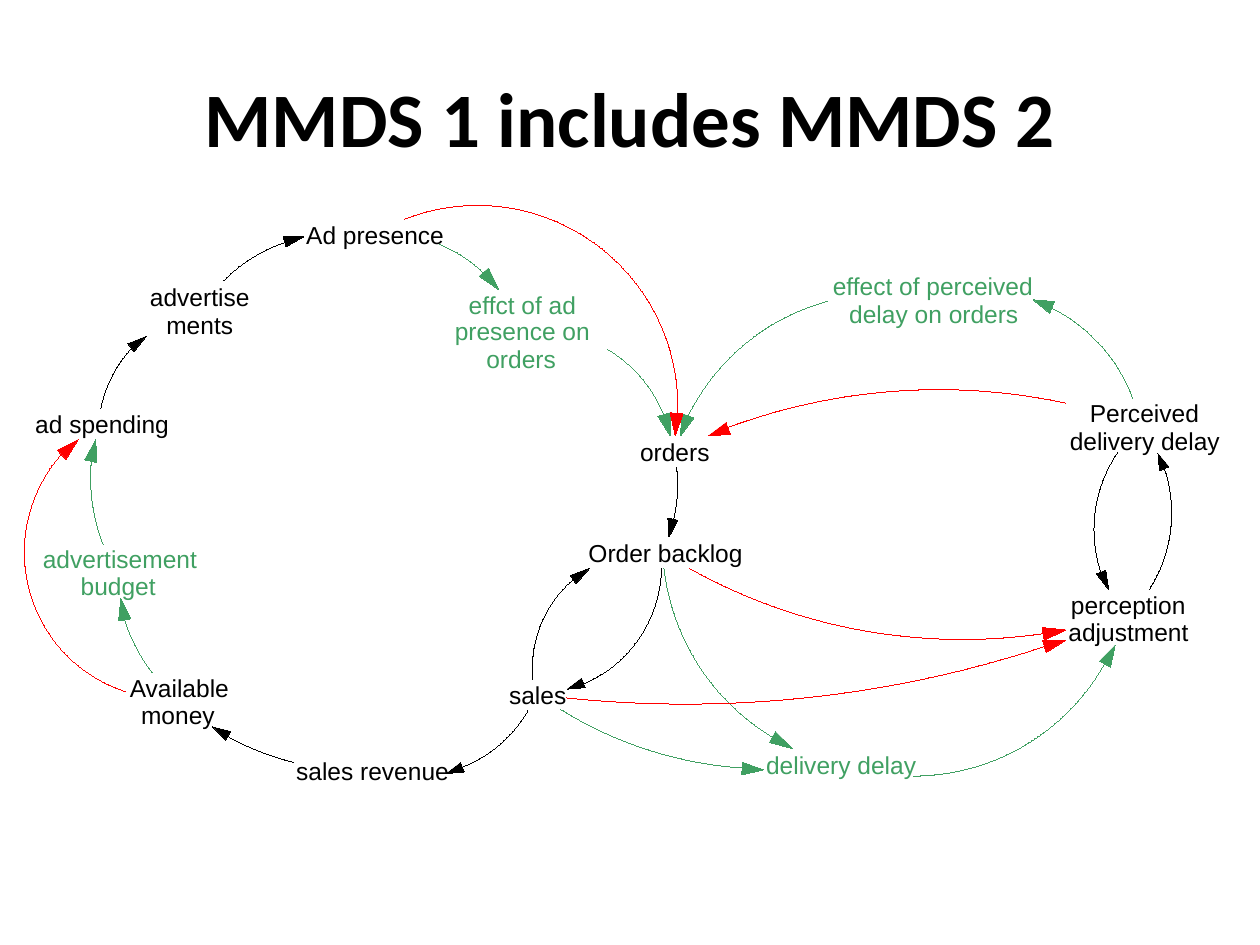
"""Build a slide with a causal loop diagram of advertising, orders and delivery delay."""
from math import atan2, cos, degrees, dist, pi, remainder, sin

from lxml import etree
from pptx import Presentation
from pptx.dml.color import RGBColor
from pptx.enum.text import MSO_ANCHOR, MSO_AUTO_SIZE, PP_ALIGN
from pptx.oxml import parse_xml
from pptx.oxml.ns import nsdecls, qn
from pptx.util import Emu, Inches, Pt

BLACK, GREEN, RED = "000000", "40A062", "FF0000"
STEPS = 16


def tint(value):
    return RGBColor.from_string(value)


def draw(shapes, points, hue):
    spots = [(Inches(x), Inches(y)) for x, y in points]
    pen = shapes.build_freeform(*spots[0])
    pen.add_line_segments(spots[1:], close=True)
    shape = pen.convert_to_shape()
    shape.shadow.inherit = False
    shape.line.color.rgb = tint(hue)
    shape.line.width = Emu(1)
    return shape


deck = Presentation()
deck.slide_width, deck.slide_height = Inches(10), Inches(7.5)
slide = deck.slides.add_slide(deck.slide_layouts[5])

title = slide.shapes.title
title.left, title.top = Inches(0.5), Inches(0.3)
title.width, title.height = Inches(9), Inches(1.25)
title.text_frame.text = "MMDS 1 includes MMDS 2"
title.text_frame.vertical_anchor = MSO_ANCHOR.MIDDLE
head = title.text_frame.paragraphs[0]
head.alignment = PP_ALIGN.CENTER
head.font.name, head.font.size, head.font.bold = "Calibri", Pt(44), True
head.font.color.rgb = tint(BLACK)

# left, top, width, words
labels = {
    BLACK: [
        (1.19, 2.24, 0.89, "advertise"),
        (1.32, 2.46, 0.62, "ments"),
        (4.04, 5.4, 0.54, "sales"),
        (2.35, 6, 1.31, "sales revenue"),
        (2.43, 1.75, 1.19, "Ad presence"),
        (5.08, 3.47, 0.65, "orders"),
        (4.67, 4.27, 1.32, "Order backlog"),
        (1.03, 5.34, 0.89, "Available"),
        (1.12, 5.56, 0.67, "money"),
        (0.28, 3.25, 1.16, "ad spending"),
        (8.65, 3.16, 0.96, "Perceived"),
        (8.49, 3.38, 1.28, "delivery delay"),
        (8.5, 4.68, 1, "perception"),
        (8.48, 4.9, 1.05, "adjustment"),
    ],
    GREEN: [
        (0.34, 4.32, 1.32, "advertisement"),
        (0.64, 4.53, 0.69, "budget"),
        (3.72, 2.3, 0.95, "effct of ad"),
        (3.61, 2.51, 1.17, "presence on"),
        (3.86, 2.73, 0.65, "orders"),
        (6.08, 5.95, 1.28, "delivery delay"),
        (6.61, 2.15, 1.7, "effect of perceived"),
        (6.74, 2.37, 1.44, "delay on orders"),
    ],
}
for hue, rows in labels.items():
    for left, top, width, words in rows:
        box = slide.shapes.add_textbox(Inches(left), Inches(top), Inches(width), Inches(0.26))
        frame = box.text_frame
        frame.margin_left = frame.margin_right = frame.margin_top = frame.margin_bottom = 0
        frame.word_wrap = False
        frame.auto_size = MSO_AUTO_SIZE.SHAPE_TO_FIT_TEXT
        frame.text = words
        font = frame.paragraphs[0].font
        font.name, font.size = "Arial", Pt(14)
        font.color.rgb = tint(hue)

# tail, base of head, tip, centre of arc
arrows = {
    BLACK: [
        ((4.19, 5.64), (3.67, 6.09), (3.54, 6.14), (3.28, 5.11)),
        ((1.77, 2.23), (2.26, 1.92), (2.41, 1.88), (2.68, 3.14)),
        ((5.37, 3.71), (5.34, 4.12), (5.31, 4.26), (4.2, 3.85)),
        ((5.25, 4.51), (4.63, 5.42), (4.5, 5.47), (4.23, 4.49)),
        ((2.33, 6.05), (1.81, 5.84), (1.69, 5.77), (2.82, 4.05)),
        ((0.8, 3.24), (1.04, 2.76), (1.16, 2.67), (1.78, 3.44)),
        ((9.12, 4.68), (9.24, 3.72), (9.19, 3.6), (8.17, 4.07)),
        ((4.23, 5.39), (4.55, 4.6), (4.68, 4.51), (5.15, 5.3)),
        ((8.87, 3.59), (8.74, 4.54), (8.8, 4.68), (9.77, 4.2)),
    ],
    GREEN: [
        ((3.49, 1.94), (3.84, 2.16), (3.96, 2.3), (3.09, 2.94)),
        ((4.82, 2.77), (5.27, 3.29), (5.32, 3.46), (4.28, 3.69)),
        ((1.21, 5.34), (0.99, 4.92), (0.96, 4.75), (2.29, 4.51)),
        ((0.82, 4.32), (0.72, 3.66), (0.76, 3.49), (2.17, 3.79)),
        ((5.27, 4.51), (6.13, 5.85), (6.29, 5.94), (7.07, 4.3)),
        ((4.45, 5.63), (5.89, 6.1), (6.06, 6.11), (6.11, 2.96)),
        ((7.25, 6.16), (8.77, 5.27), (8.85, 5.12), (7.24, 4.41)),
        ((8.99, 3.16), (8.35, 2.44), (8.2, 2.38), (7.77, 3.61)),
        ((6.57, 2.39), (5.46, 3.3), (5.4, 3.46), (7.02, 4.07)),
    ],
    RED: [
        ((3.21, 1.74), (5.37, 3.28), (5.36, 3.46), (3.79, 3.22)),
        ((8.46, 3.2), (5.78, 3.4), (5.62, 3.46), (7.45, 7.91)),
        ((5.47, 4.51), (8.28, 5.03), (8.46, 5), (7.64, 0.63)),
        ((4.5, 5.54), (8.29, 5.13), (8.46, 5.08), (5.44, -3.52)),
        ((1, 5.49), (0.49, 3.61), (0.62, 3.49), (1.36, 4.38)),
    ],
}
for hue, rows in arrows.items():
    shapes = slide.shapes.add_group_shape().shapes if hue == RED else slide.shapes
    half = 0.04 if hue == BLACK else 0.05
    for tail, base, tip, (cx, cy) in rows:
        first = atan2(tail[1] - cy, tail[0] - cx)
        sweep = remainder(atan2(base[1] - cy, base[0] - cx) - first, 2 * pi)
        reach = dist(tail, (cx, cy))
        turns = [first + sweep * step / STEPS for step in range(STEPS + 1)]
        rim = [(cx + reach * cos(turn), cy + reach * sin(turn)) for turn in turns]
        wedge = draw(shapes, [*rim, (cx, cy)], hue)
        wedge.fill.background()

        outline = next(wedge.element.iter(qn("a:path")))
        width, height = outline.get("w"), outline.get("h")
        start, hub = [
            f'<a:pt x="{Inches(x) - wedge.left}" y="{Inches(y) - wedge.top}"/>'
            for x, y in (tail, (cx, cy))
        ]
        angles = [round(degrees(turn) * 60000) for turn in (first % (2 * pi), sweep)]
        curve = (
            f'<a:moveTo>{start}</a:moveTo><a:arcTo wR="{Inches(reach)}" hR="{Inches(reach)}"'
            f' stAng="{angles[0]}" swAng="{angles[1]}"/>'
        )
        sides = f"<a:lnTo>{hub}</a:lnTo><a:close/>"
        holder = outline.getparent()
        holder.remove(outline)
        for mode, body in (('fill="none"', curve), ('stroke="0"', curve + sides)):
            holder.append(parse_xml(
                f'<a:path {nsdecls("a")} w="{width}" h="{height}" {mode}>{body}</a:path>'
            ))

        size = dist(tip, base)
        dx, dy = half * (base[1] - tip[1]) / size, half * (tip[0] - base[0]) / size
        wings = [(base[0] + side * dx, base[1] + side * dy) for side in (1, -1)]
        point = draw(shapes, [tip, *wings], hue)
        point.fill.solid()
        point.fill.fore_color.rgb = tint(hue)

deck.save("out.pptx")
